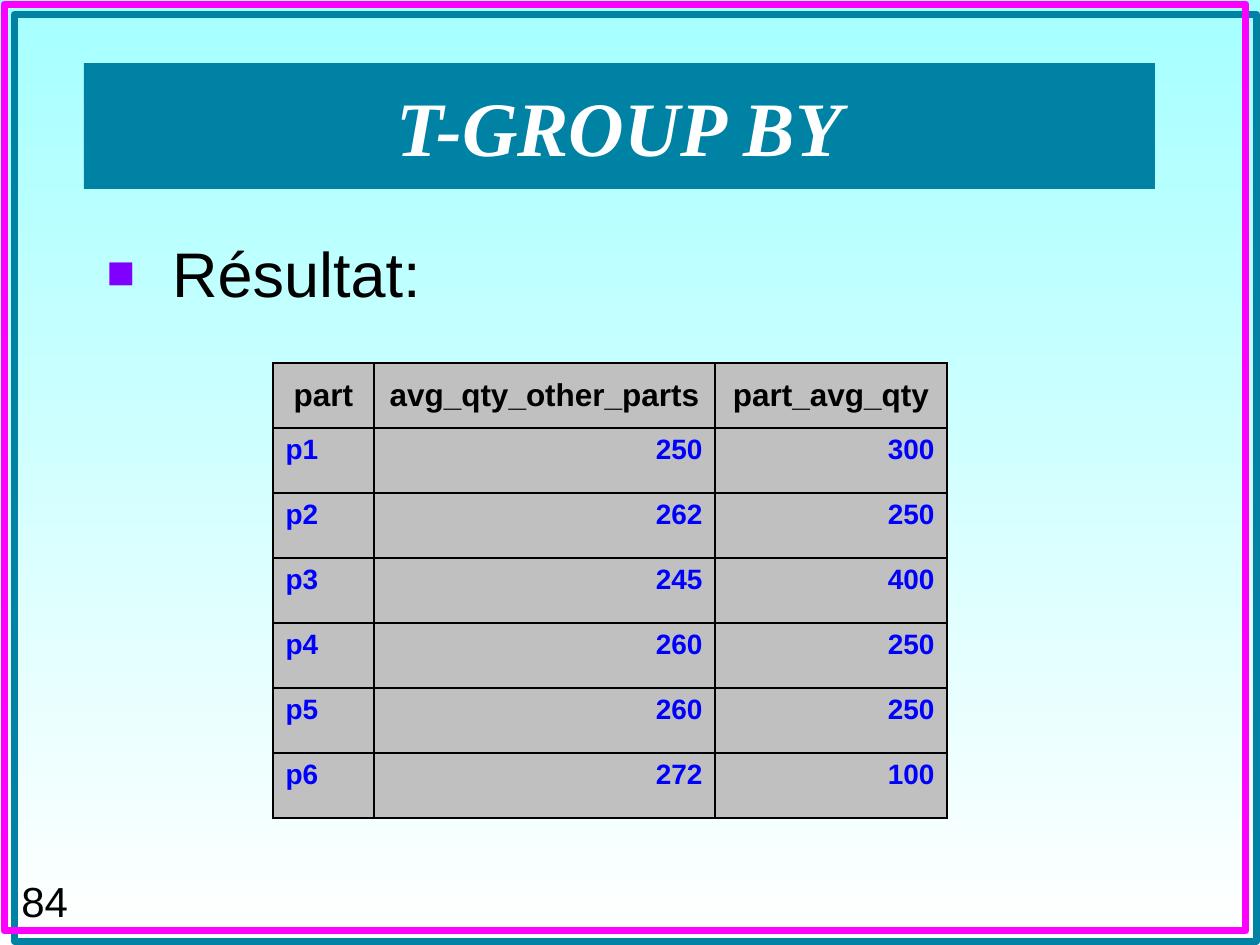
from lxml.etree import SubElement
from pptx import Presentation
from pptx.dml.color import RGBColor
from pptx.enum.shapes import MSO_SHAPE as Preset
from pptx.enum.text import MSO_ANCHOR as Anchor, MSO_AUTO_SIZE as AutoSize, PP_ALIGN as Align
from pptx.oxml.ns import qn
from pptx.util import Emu, Pt

COLORS = {
    "sky": "A6FFFF", "white": "FFFFFF", "black": "000000", "teal": "0082A5",
    "magenta": "FF00FF", "violet": "7F00FF", "blue": "0000FF", "gray": "C0C0C0",
}
HEADERS = ["part", "avg_qty_other_parts", "part_avg_qty"]
RESULTS = [
    ("p1", 250, 300), ("p2", 262, 250), ("p3", 245, 400),
    ("p4", 260, 250), ("p5", 260, 250), ("p6", 272, 100),
]


def px(length):
    return Emu(round(length * 914400 / 126))


def rgb(name):
    return RGBColor.from_string(COLORS[name])


def add_xml(parent, tag, **attributes):
    return SubElement(parent, qn(tag), attributes)


class SlideBuilder:
    """Hold the slide style and add each kind of element to the current slide."""

    def __init__(self, presentation):
        self.slide = presentation.slides.add_slide(presentation.slide_layouts[1])
        self.font = "Arial"
        self.title_font = "Times New Roman"

    def background(self, top, bottom):
        fill = self.slide.background.fill
        fill.gradient()
        fill.gradient_angle = 270
        for stop, color in zip(fill.gradient_stops, (top, bottom)):
            stop.color.rgb = rgb(color)

    def text_run(self, paragraph, text, size, color, bold=False, italic=False, font=None):
        run = paragraph.add_run()
        run.text = text
        run.font.name = font or self.font
        run.font.size = Pt(size)
        run.font.bold = bold
        run.font.italic = italic
        run.font.color.rgb = rgb(color)

    def place(self, shape, x, y, width, height, anchor):
        shape.left, shape.top, shape.width, shape.height = map(px, (x, y, width, height))
        shape.text_frame.auto_size = AutoSize.NONE
        shape.text_frame.vertical_anchor = anchor
        return shape.text_frame.paragraphs[0]

    def title(self, text, *box):
        shape = self.slide.shapes.title
        shape.fill.solid()
        shape.fill.fore_color.rgb = rgb("teal")
        paragraph = self.place(shape, *box, Anchor.MIDDLE)
        paragraph.alignment = Align.CENTER
        self.text_run(paragraph, text, 44, "white", True, True, self.title_font)

    def bullet(self, text, *box):
        paragraph = self.place(self.slide.placeholders[1], *box, Anchor.TOP)
        paragraph.space_before = Pt(4)
        self.text_run(paragraph, text, 36, "black")
        properties = paragraph._p.get_or_add_pPr()
        properties.set("marL", str(px(48)))
        properties.set("indent", str(px(-48)))
        add_xml(add_xml(properties, "a:buClr"), "a:srgbClr", val=COLORS["violet"])
        add_xml(properties, "a:buSzPct", val="75000")
        add_xml(properties, "a:buFont", typeface=self.font)
        add_xml(properties, "a:buChar", char="■")

    def page_number(self, text, *box):
        shape = self.slide.shapes.add_textbox(*map(px, box))
        shape.text_frame.word_wrap = False
        self.text_run(shape.text_frame.paragraphs[0], text, 24, "black")

    def frame(self, *box):
        shape = self.slide.shapes.add_shape(Preset.RECTANGLE, *map(px, box))
        shape.fill.background()
        shape.line.color.rgb = rgb("magenta")
        shape.line.width = Pt(4)
        shape.shadow.inherit = False
        effects = shape._element.spPr.find(qn("a:effectLst"))
        shadow = add_xml(effects, "a:outerShdw", dist=str(Pt(8.5)), dir="2700000",
                         algn="ctr", rotWithShape="0")
        add_xml(shadow, "a:srgbClr", val=COLORS["teal"])

    def cell(self, cell, text, size, color, alignment, anchor):
        properties = cell._tc.get_or_add_tcPr()
        for side in "LRTB":
            line = add_xml(properties, f"a:ln{side}", w=str(Pt(1)))
            add_xml(add_xml(line, "a:solidFill"), "a:srgbClr", val=COLORS["black"])
        cell.fill.solid()
        cell.fill.fore_color.rgb = rgb("gray")
        cell.vertical_anchor = anchor
        paragraph = cell.text_frame.paragraphs[0]
        paragraph.alignment = alignment
        self.text_run(paragraph, text, size, color, True)

    def table(self, headers, rows, x, y, widths, row_height):
        count = len(rows) + 1
        table = self.slide.shapes.add_table(
            count, len(headers), px(x), px(y), px(sum(widths)), px(count * row_height)).table
        for column, width in zip(table.columns, widths):
            column.width = px(width)
        for row in table.rows:
            row.height = px(row_height)
        for column, header in enumerate(headers):
            self.cell(table.cell(0, column), header, 18, "black", Align.CENTER, Anchor.MIDDLE)
        for index, values in enumerate(rows, 1):
            for column, value in enumerate(values):
                alignment = Align.RIGHT if column else Align.LEFT
                self.cell(table.cell(index, column), str(value), 16, "blue",
                          alignment, Anchor.TOP)


def main():
    presentation = Presentation()
    presentation.slide_width, presentation.slide_height = px(1260), px(945)
    builder = SlideBuilder(presentation)
    builder.background("sky", "white")
    builder.page_number("84", 9, 869, 101, 63)
    builder.frame(4, 4, 1242, 927)
    builder.title("T-GROUP BY", 84, 63, 1071, 126)
    builder.bullet(" Résultat:", 94, 228, 1071, 115)
    builder.table(HEADERS, RESULTS, 273, 363, [101, 341, 232], 65)
    presentation.save("out.pptx")


if __name__ == "__main__":
    main()
